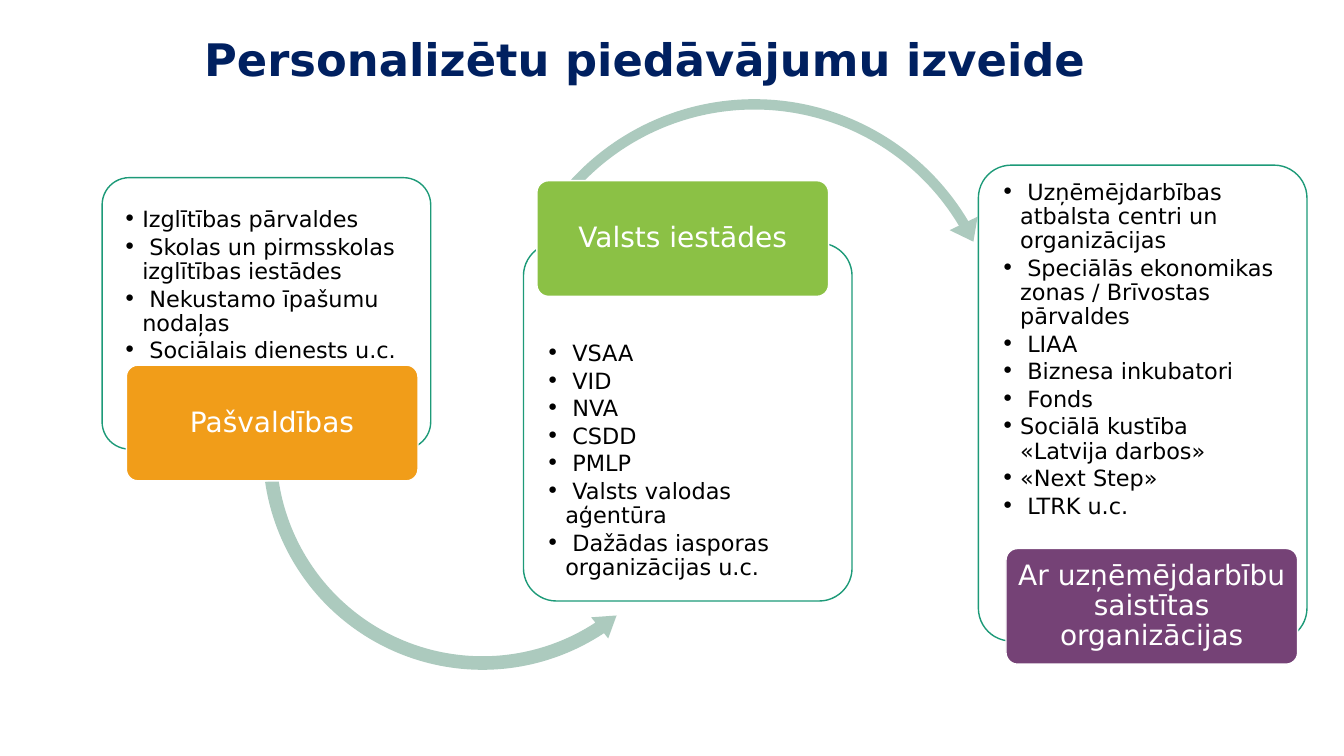
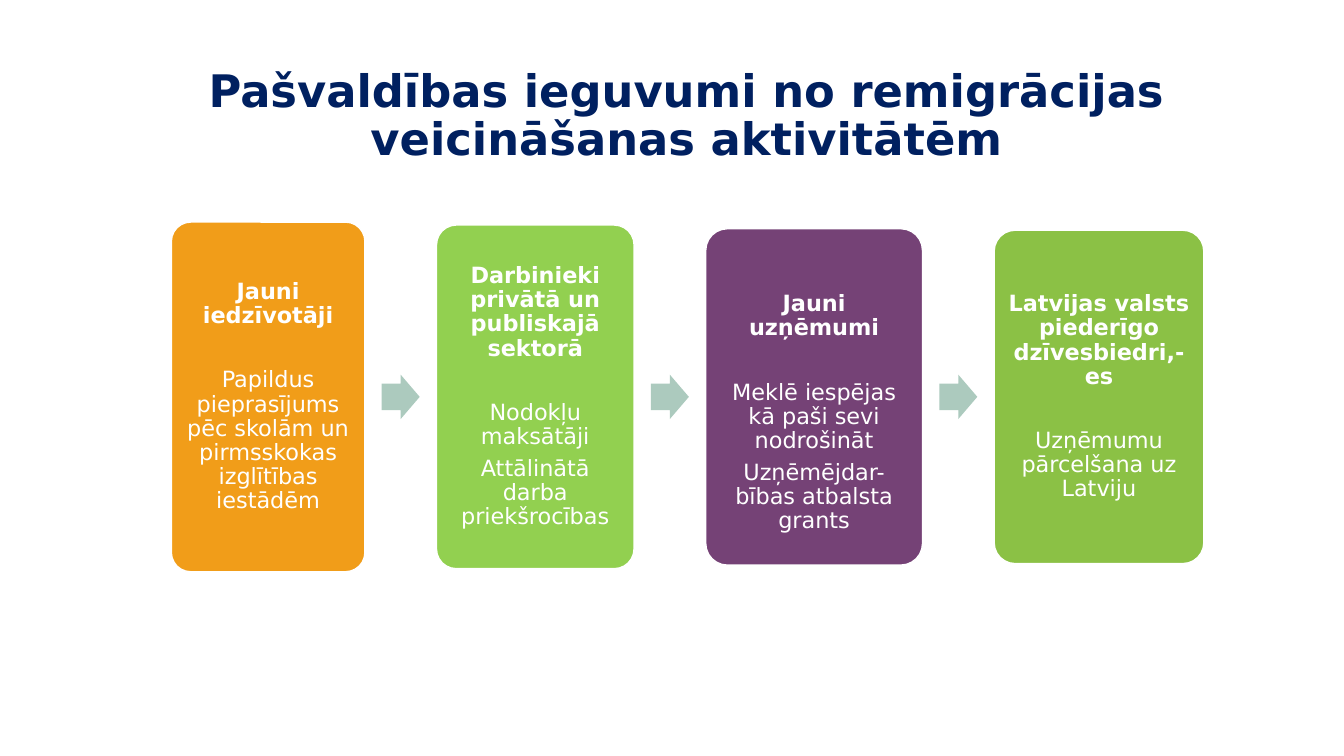
from dataclasses import dataclass

from lxml.etree import SubElement
from pptx import Presentation
from pptx.dml.color import RGBColor as Rgb
from pptx.enum.shapes import MSO_SHAPE as Geo
from pptx.enum.text import MSO_ANCHOR as Anchor, PP_ALIGN as Align
from pptx.oxml.ns import qn
from pptx.util import Inches, Pt


@dataclass(frozen=True)
class Theme:
    """Colours, font and type sizes of the deck."""
    font: str = "DejaVu Sans"
    navy: str = "002060"
    black: str = "000000"
    white: str = "FFFFFF"
    teal: str = "1D9A78"
    sage: str = "ACCABE"
    amber: str = "F19D19"
    lime: str = "92D050"
    green: str = "8BC145"
    plum: str = "754276"
    head: int = 32
    label: int = 20
    body: int = 16


T = Theme()
WIDE, HIGH = Inches(13.333), Inches(7.5)
PANEL_W, BADGE_W, BADGE_H = 24.45, 21.7, 15.3
CARD_X, CARD_MID, CARD_GAP = 12.75, 52.5, 5.33
ARROW_W, ARROW_H = 2.83, 5.87

STAGES = [
    dict(box=(7.6, 23.5, PANEL_W, 35.9), shift=(1.8, 24.8), tone=T.amber,
         name="Pašvaldības",
         items=["Izglītības pārvaldes",
                " Skolas un pirmsskolas izglītības iestādes",
                " Nekustamo īpašumu nodaļas",
                " Sociālais dienests u.c."],
         arc=(Geo.LEFT_CIRCULAR_ARROW, (11.45, 6.1, 33.7, 59.9),
              (0.03, 3.38, 33.95, 103.06, 0.03))),
    dict(box=(38.95, 32.15, PANEL_W, 47.35), shift=(1, -8.25), tone=T.green,
         name="Valsts iestādes", top=True,
         items=[" VSAA", " VID", " NVA", " CSDD", " PMLP",
                " Valsts valodas aģentūra",
                " Dažādas iasporas organizācijas u.c."],
         arc=(Geo.CIRCULAR_ARROW, (-2.1, -20.4, 38.55, 68.55),
              (0.02, 2.93, 197.55, 127.99, 0.03))),
    dict(box=(72.8, 21.85, PANEL_W, 62.95), shift=(2.05, 50.7), tone=T.plum,
         name="Ar uzņēmējdarbību saistītas organizācijas",
         items=[" Uzņēmējdarbības atbalsta centri un organizācijas",
                " Speciālās ekonomikas zonas / Brīvostas pārvaldes",
                " LIAA", " Biznesa inkubatori", " Fonds",
                "Sociālā kustība «Latvija darbos»", "«Next Step»",
                " LTRK u.c."]),
]

GAINS = [
    (14.4, 46.25, T.amber, 0, "Jauni iedzīvotāji",
     ["Papildus pieprasījums pēc skolām un pirmsskokas izglītības iestādēm"]),
    (14.7, 45.45, T.lime, 0, "Darbinieki privātā un publiskajā sektorā",
     ["Nodokļu maksātāji", "Attālinātā darba priekšrocības"]),
    (16.13, 44.5, T.plum, 0.32, "Jauni uzņēmumi",
     ["Meklē iespējas kā paši sevi nodrošināt",
      "Uzņēmējdar-bības atbalsta grants"]),
    (15.6, 44.1, T.green, 0, "Latvijas valsts piederīgo dzīvesbiedri,-es",
     ["Uzņēmumu pārcelšana uz Latviju"]),
]


def place(box):
    """Turn a box in percent of the slide into lengths."""
    x, y, w, h = box
    return [int(v * side / 100)
            for v, side in ((x, WIDE), (y, HIGH), (w, WIDE), (h, HIGH))]


def draw(slide, geo, box, tone, line=None, adj=()):
    """Add a flat preset shape."""
    shape = slide.shapes.add_shape(geo, *place(box))
    shape.shadow.inherit = False
    shape.fill.solid()
    shape.fill.fore_color.rgb = Rgb.from_string(tone)
    if line:
        shape.line.color.rgb = Rgb.from_string(line)
        shape.line.width = Pt(1)
    else:
        shape.line.fill.background()
    for i, value in enumerate(adj):
        shape.adjustments[i] = value
    return shape


def pad(frame, left, top, right, bottom):
    """Set the insets of a text frame in inches."""
    frame.margin_left, frame.margin_top = Inches(left), Inches(top)
    frame.margin_right, frame.margin_bottom = Inches(right), Inches(bottom)


def write(frame, lines, size, tone, align=Align.CENTER, after=0, bold=False):
    """Fill a frame with one styled paragraph for each line."""
    frame.word_wrap = True
    frame.vertical_anchor = Anchor.MIDDLE
    frame.text = "\n".join(lines)
    for para in frame.paragraphs:
        para.alignment = align
        para.line_spacing = 0.9
        para.space_after = Pt(after)
        for run in para.runs:
            font = run.font
            font.name, font.size, font.bold = T.font, Pt(size), bold
            font.color.rgb = Rgb.from_string(tone)


def dot(para):
    """Give a paragraph a hanging bullet."""
    props = para._p.get_or_add_pPr()
    props.set("marL", str(Inches(0.19)))
    props.set("indent", str(-Inches(0.19)))
    SubElement(props, qn("a:buFont")).set("typeface", T.font)
    SubElement(props, qn("a:buChar")).set("char", "•")


def title(slide, text, box):
    """Add the slide title."""
    frame = slide.shapes.add_textbox(*place(box)).text_frame
    write(frame, [text], T.head, T.navy, bold=True)


def stage(slide, box, shift, tone, name, items, arc=None, top=False):
    """Add a bulleted panel, the arc that leaves it and its badge."""
    x, y, _, h = box
    panel = draw(slide, Geo.ROUNDED_RECTANGLE, box, T.white, T.teal, [0.1])
    frame = panel.text_frame
    write(frame, items, T.body, T.black, Align.LEFT, 2.4)
    room = round(h * 7.5 / 400, 2)
    pad(frame, 0.13, *((room, 0.18, 0.13) if top else (0.13, 0.18, room)))
    if top:
        frame.vertical_anchor = Anchor.TOP
    for para in frame.paragraphs:
        dot(para)
    if arc:
        geo, (dx, dy, wide, high), bend = arc
        draw(slide, geo, (x + dx, y + dy, wide, high), T.sage, adj=bend)
    spot = (x + shift[0], y + shift[1], BADGE_W, BADGE_H)
    badge = draw(slide, Geo.ROUNDED_RECTANGLE, spot, tone, T.white, [0.1])
    write(badge.text_frame, [name], T.label, T.white)
    pad(badge.text_frame, 0.04, 0.03, 0.04, 0.03)


def card(slide, box, tone, drop, head, lines):
    """Add a card with a bold heading over plain lines."""
    shape = draw(slide, Geo.ROUNDED_RECTANGLE, box, tone, T.white, [0.1])
    frame = shape.text_frame
    write(frame, [head, *lines], T.body, T.white, after=5.6)
    pad(frame, 0.07, 0.07 + drop, 0.07, 0.07)
    first = frame.paragraphs[0]
    first.space_after = Pt(28.5)
    first.runs[0].font.bold = True


def offers(slide):
    """Build the slide of the three partner groups."""
    title(slide, "Personalizētu piedāvājumu izveide", (5.1, 4.93, 85.8, 6.53))
    for part in STAGES:
        stage(slide, **part)


def gains(slide):
    """Build the slide of the four gains in a row."""
    title(slide, "Pašvaldības ieguvumi no remigrācijas veicināšanas aktivitātēm",
          (3.4, 8.67, 95.4, 13.6))
    x = CARD_X
    for i, (w, h, *rest) in enumerate(GAINS):
        if i:
            spot = (x - (CARD_GAP + ARROW_W) / 2, CARD_MID - ARROW_H / 2,
                    ARROW_W, ARROW_H)
            draw(slide, Geo.RIGHT_ARROW, spot, T.sage, adj=[0.6, 0.5])
        card(slide, (x, CARD_MID - h / 2, w, h), *rest)
        x += w + CARD_GAP


def main():
    """Build and save the deck."""
    deck = Presentation()
    deck.slide_width, deck.slide_height = WIDE, HIGH
    for build in (offers, gains):
        build(deck.slides.add_slide(deck.slide_layouts[6]))
    deck.save("out.pptx")


if __name__ == "__main__":
    main()
